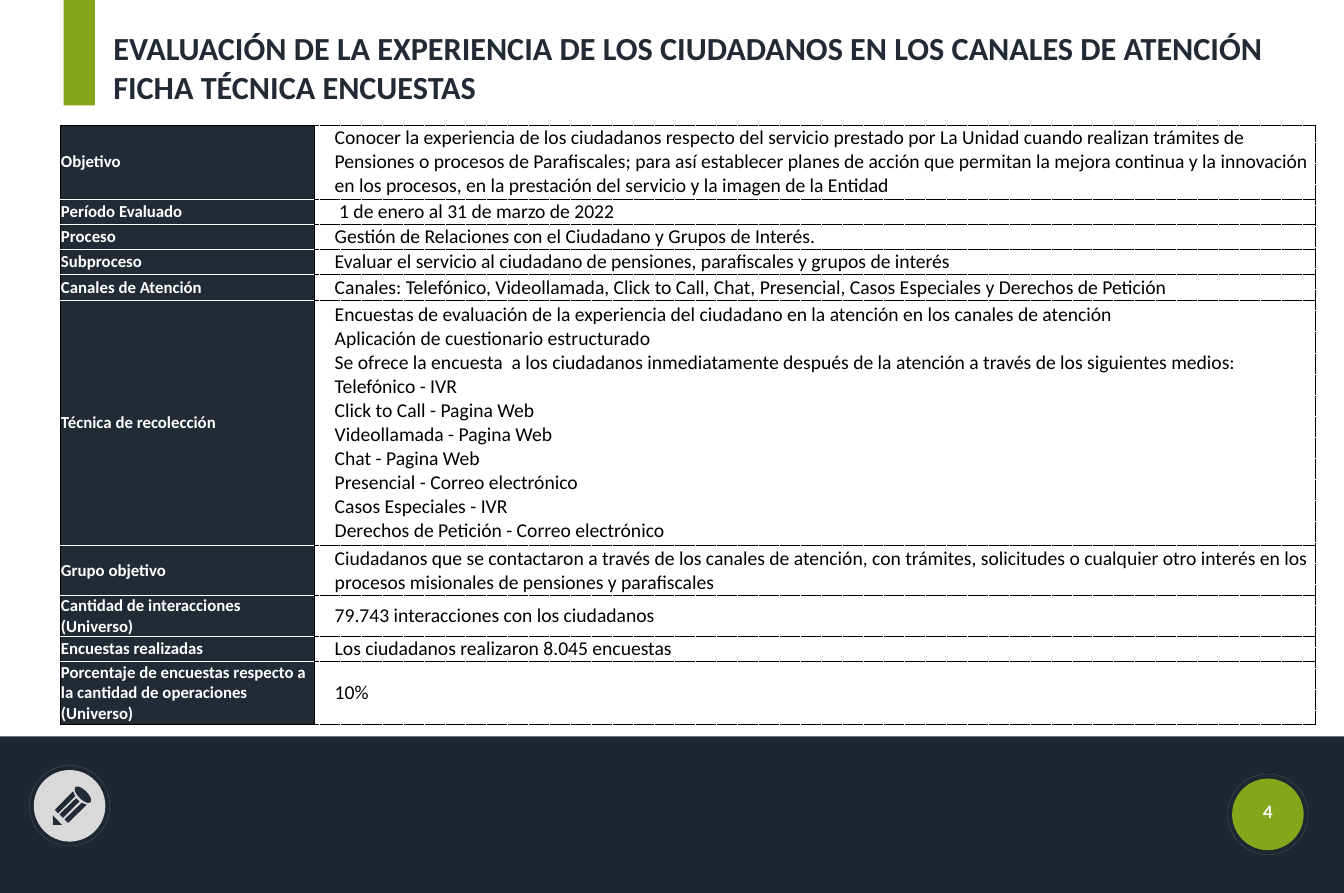
"""Build the survey data sheet slide."""
from lxml.etree import SubElement
from pptx import Presentation
from pptx.dml.color import RGBColor
from pptx.enum.dml import MSO_LINE
from pptx.enum.shapes import MSO_SHAPE
from pptx.enum.text import MSO_ANCHOR, PP_ALIGN
from pptx.oxml.ns import qn
from pptx.util import Pt

PX = 9144
NAVY = RGBColor(0x22, 0x2A, 0x35)
FOOTER = RGBColor(0x1E, 0x27, 0x31)
GREEN = RGBColor(0x85, 0xA6, 0x1A)
LIGHT = RGBColor(0xD9, 0xD9, 0xD9)
GRAY = RGBColor(0x66, 0x66, 0x66)
WHITE = RGBColor(0xFF, 0xFF, 0xFF)
BLACK = RGBColor(0, 0, 0)

TITLE = ["EVALUACIÓN DE LA EXPERIENCIA DE LOS CIUDADANOS EN LOS CANALES DE ATENCIÓN",
         "FICHA TÉCNICA ENCUESTAS"]
ROWS = [
    (147, "Objetivo", [
        "Conocer la experiencia de los ciudadanos respecto del servicio prestado por La Unidad "
        "cuando realizan trámites de Pensiones o procesos de Parafiscales; para así establecer "
        "planes de acción que permitan la mejora continua y la innovación en los procesos, "
        "en la prestación del servicio y la imagen de la Entidad"]),
    (50, "Período Evaluado", [" 1 de enero al 31 de marzo de 2022"]),
    (50, "Proceso", ["Gestión de Relaciones con el Ciudadano y Grupos de Interés."]),
    (50, "Subproceso", [
        "Evaluar el servicio al ciudadano de pensiones, parafiscales y grupos de interés"]),
    (50, "Canales de Atención", [
        "Canales: Telefónico, Videollamada, Click to Call, Chat, Presencial, "
        "Casos Especiales y Derechos de Petición"]),
    (488, "Técnica de recolección", [
        "Encuestas de evaluación de la experiencia del ciudadano en la atención "
        "en los canales de atención",
        "Aplicación de cuestionario estructurado\n"
        "Se ofrece la encuesta  a los ciudadanos inmediatamente después de la atención "
        "a través de los siguientes medios:",
        "Telefónico - IVR",
        "Click to Call - Pagina Web",
        "Videollamada - Pagina Web",
        "Chat - Pagina Web",
        "Presencial - Correo electrónico",
        "Casos Especiales - IVR",
        "Derechos de Petición - Correo electrónico"]),
    (98, "Grupo objetivo", [
        "Ciudadanos que se contactaron a través de los canales de atención, con trámites, "
        "solicitudes o cualquier otro interés en los procesos misionales de pensiones "
        "y parafiscales"]),
    (50, "Cantidad de interacciones (Universo)", ["79.743 interacciones con los ciudadanos"]),
    (50, "Encuestas realizadas", ["Los ciudadanos realizaron 8.045 encuestas"]),
    (126, "Porcentaje de encuestas respecto a la cantidad de operaciones (Universo)", ["10%"]),
]
COLUMNS = (504, 1985)
BADGES = [(67, 1528, LIGHT), (2444, 1545, GREEN)]
BADGE_SIZE, RING_GAP = 142, 9
PENCIL = [
    [(105, 1618), (123, 1637), (105, 1637)],
    [(145, 1570), (109, 1607), (115, 1614), (149, 1580)],
    [(155, 1588), (151, 1584), (118, 1616), (125, 1623), (158, 1590)],
    [(162, 1593), (128, 1626), (135, 1633), (172, 1597)],
]


def px(*lengths):
    return [n * PX for n in lengths]


def paint(sp, fill):
    sp.shadow.inherit = False
    sp.fill.solid()
    sp.fill.fore_color.rgb = fill
    sp.line.fill.background()


def add_shape(kind, box, fill):
    sp = slide.shapes.add_shape(kind, *px(*box))
    paint(sp, fill)
    return sp


def write(tf, lines, size, color, bold, font="Calibri", indent=0, align=PP_ALIGN.LEFT):
    for i, line in enumerate(lines):
        p = tf.paragraphs[0] if i == 0 else tf.add_paragraph()
        p.text = line
        p.alignment = align
        if indent:
            pPr = p._p.get_or_add_pPr()
            pPr.set("marL", str(indent * PX))
            pPr.set("indent", "0")
        for r in p.runs:
            r.font.name = font
            r.font.size = Pt(size)
            r.font.bold = bold
            r.font.color.rgb = color


def add_border(cell, side, color, dash):
    ln = SubElement(cell._tc.get_or_add_tcPr(), qn(f"a:ln{side}"), w=str(Pt(1)))
    fill = SubElement(ln, qn("a:solidFill"))
    SubElement(fill, qn("a:srgbClr"), val=str(color))
    SubElement(ln, qn("a:prstDash"), val=dash)


def format_cell(cell):
    cell.vertical_anchor = MSO_ANCHOR.MIDDLE
    cell.margin_left = cell.margin_right = cell.margin_top = PX
    cell.margin_bottom = 0


def add_sheet():
    height = sum(row[0] for row in ROWS)
    frame = slide.shapes.add_table(len(ROWS), 2, *px(120, 248, sum(COLUMNS), height))
    table = frame.table
    table.first_row = table.horz_banding = False
    for column, width in zip(table.columns, COLUMNS):
        column.width = width * PX
    last = len(ROWS) - 1
    for i, (row_height, label, lines) in enumerate(ROWS):
        table.rows[i].height = row_height * PX
        head, value = table.cell(i, 0), table.cell(i, 1)
        for cell in (head, value):
            format_cell(cell)
        write(head.text_frame, [label], 24, WHITE, True)
        write(value.text_frame, lines, 28, BLACK, False, indent=39)
        edges = {"L": BLACK, "R": BLACK,
                 "T": WHITE if i > 0 else BLACK, "B": WHITE if i < last else BLACK}
        for side, color in edges.items():
            add_border(head, side, color, "solid")
            add_border(value, side, BLACK, "solid" if side == "L" else "dot")
        head.fill.solid()
        head.fill.fore_color.rgb = NAVY
        value.fill.background()


def add_badge(left, top, color):
    add_shape(MSO_SHAPE.OVAL, (left, top, BADGE_SIZE, BADGE_SIZE), color)
    size = BADGE_SIZE + 2 * RING_GAP
    ring = add_shape(MSO_SHAPE.OVAL, (left - RING_GAP, top - RING_GAP, size, size), color)
    ring.fill.background()
    ring.line.color.rgb = GRAY
    ring.line.width = Pt(0.25)
    ring.line.dash_style = MSO_LINE.SQUARE_DOT


def add_pencil():
    builder = slide.shapes.build_freeform(*PENCIL[0][0], scale=PX)
    for i, (start, *rest) in enumerate(PENCIL):
        if i > 0:
            builder.move_to(*start)
        builder.add_line_segments(rest, close=True)
    paint(builder.convert_to_shape(), NAVY)
    eraser = add_shape(MSO_SHAPE.OVAL, (143, 1568, 43, 18), NAVY)
    eraser.rotation = 45


def add_text(box, lines, size, color, wrap, **style):
    tf = slide.shapes.add_textbox(*px(*box)).text_frame
    tf.word_wrap = wrap
    write(tf, lines, size, color, True, **style)


prs = Presentation()
prs.slide_width, prs.slide_height = px(2666, 1772)
slide = prs.slides.add_slide(prs.slide_layouts[6])
add_shape(MSO_SHAPE.RECTANGLE, (0, 1461, 2666, 311), FOOTER)
for badge in BADGES:
    add_badge(*badge)
add_pencil()
add_text((2452, 1585, 126, 61), ["4"], 24, WHITE, True, font="Lato", align=PP_ALIGN.CENTER)
add_sheet()
add_shape(MSO_SHAPE.RECTANGLE, (126, 0, 62, 209), GREEN)
add_text((215, 51, 2342, 165), TITLE, 46, NAVY, False)
prs.save("out.pptx")
